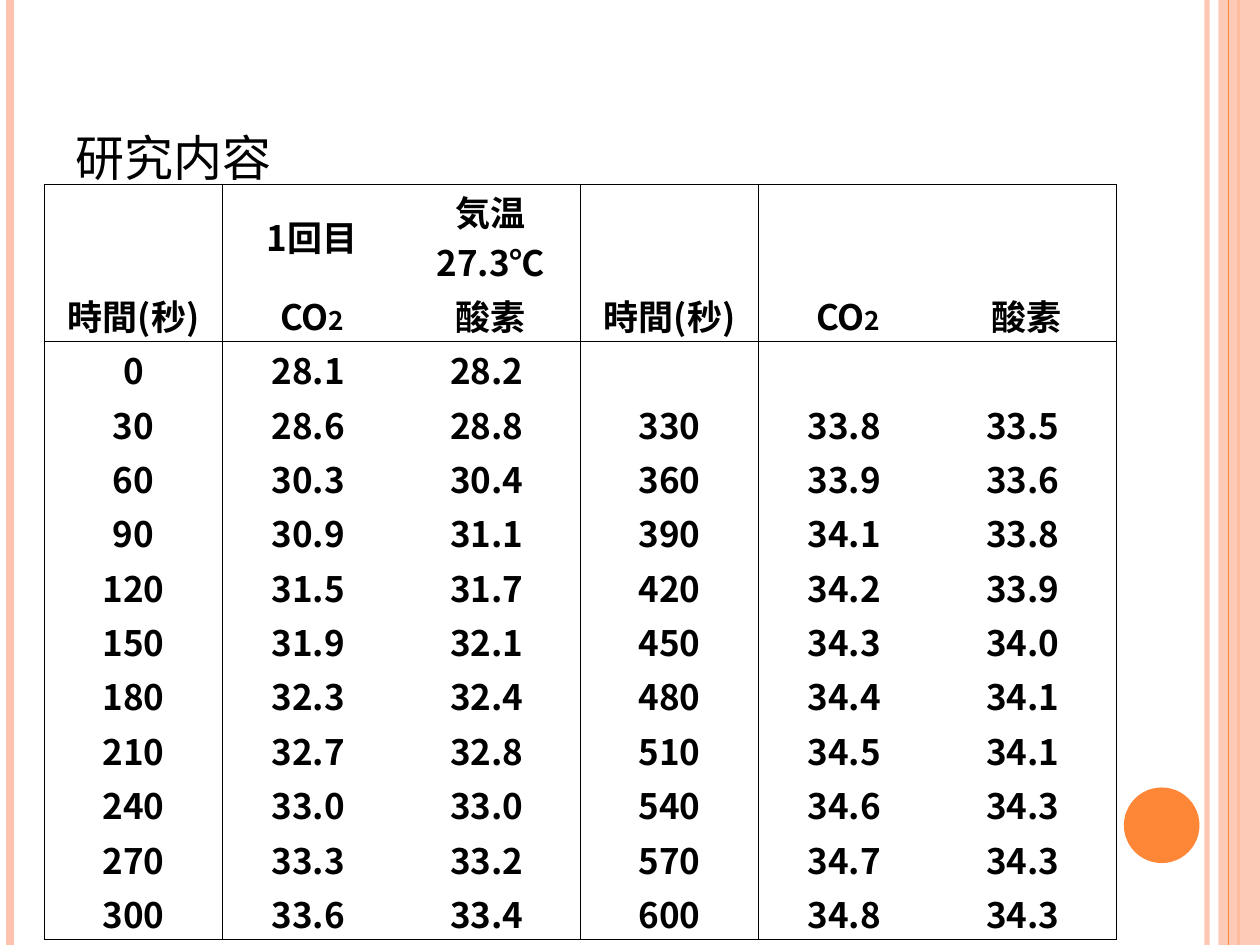
from dataclasses import dataclass

from lxml import etree
from pptx import Presentation
from pptx.dml.color import RGBColor
from pptx.enum.shapes import MSO_CONNECTOR, MSO_SHAPE
from pptx.enum.text import MSO_ANCHOR, PP_ALIGN
from pptx.oxml.ns import qn
from pptx.util import Inches, Pt

STRAIGHT = MSO_CONNECTOR.STRAIGHT
RECTANGLE, OVAL = MSO_SHAPE.RECTANGLE, MSO_SHAPE.OVAL
CENTER = PP_ALIGN.CENTER
MIDDLE, BOTTOM = MSO_ANCHOR.MIDDLE, MSO_ANCHOR.BOTTOM

SLIDE_WIDTH, SLIDE_HEIGHT = 10, 7.5
BLACK, ORANGE, PEACH = "000000", "FE8637", "FEC3AE"
SANS, SERIF = "Noto Sans CJK JP", "TeX Gyre Schola"

TABLE_LEFT, TABLE_TOP = 0.35, 1.46
TABLE_WIDTH, TABLE_HEIGHT = 8.51, 6
TITLE_ROW_HEIGHT = 0.82
COLUMN_COUNT = 6
RULED_COLUMNS = {0, 1, 3, 4, 6}
SUBSCRIPT_SIZE = 15
TIME_STEP = 30

TITLES = ["", "1回目", "気温27.3℃", "", "", ""]
HEADINGS = ["時間(秒)", "CO2", "酸素"] * 2
FIRST_HALF = [
    (28.1, 28.2), (28.6, 28.8), (30.3, 30.4), (30.9, 31.1), (31.5, 31.7), (31.9, 32.1),
    (32.3, 32.4), (32.7, 32.8), (33.0, 33.0), (33.3, 33.2), (33.6, 33.4),
]
SECOND_HALF = [
    (33.8, 33.5), (33.9, 33.6), (34.1, 33.8), (34.2, 33.9), (34.3, 34.0),
    (34.4, 34.1), (34.5, 34.1), (34.6, 34.3), (34.7, 34.3), (34.8, 34.3),
]


@dataclass
class Stripe:
    """A vertical line over the full height of the slide."""

    x: float
    color: str
    width: float
    opacity: int = 100


@dataclass
class Block:
    """A filled shape without outline."""

    kind: MSO_SHAPE
    left: float
    top: float
    width: float
    height: float
    color: str
    opacity: int = 100


STRIPES = [
    Stripe(9.58, PEACH, 3, 93),
    Stripe(0.08, PEACH, 4.5),
    Stripe(9.83, ORANGE, 1.5),
]
SIDE_BAND = Block(RECTANGLE, 9.67, 0, 0.33, SLIDE_HEIGHT, PEACH, 87)
BAND_STRIPE = Stripe(9.75, ORANGE, 0.75)
DISC = Block(OVAL, 8.92, 6.25, 0.6, 0.6, ORANGE)


def set_color(fill, color: str, opacity: int = 100) -> None:
    """Make a fill solid, with an optional opacity in percent."""
    fill.solid()
    fill.fore_color.rgb = RGBColor.from_string(color)
    if opacity < 100:
        element = fill._xPr.find(f".//{qn('a:srgbClr')}")
        etree.SubElement(element, qn("a:alpha"), val=str(opacity * 1000))


def draw_stripe(slide, stripe: Stripe) -> None:
    """Draw a vertical stripe without shadow."""
    x = Inches(stripe.x)
    connector = slide.shapes.add_connector(STRAIGHT, x, 0, x, Inches(SLIDE_HEIGHT))
    connector.line.width = Pt(stripe.width)
    set_color(connector.line.fill, stripe.color, stripe.opacity)
    etree.SubElement(connector._element.spPr, qn("a:effectLst"))


def draw_block(slide, block: Block) -> None:
    """Draw a filled shape without outline or shadow."""
    box = (Inches(n) for n in (block.left, block.top, block.width, block.height))
    shape = slide.shapes.add_shape(block.kind, *box)
    shape.shadow.inherit = False
    set_color(shape.fill, block.color, block.opacity)
    shape.line.fill.background()


def write_text(paragraph, text: str, *, size: float = 20, font: str = SANS,
               bold: bool = True, small_caps: bool = False) -> None:
    """Append a formatted run to a paragraph."""
    run = paragraph.add_run()
    run.text = text
    run.font.name = font
    run.font.size = Pt(size)
    run.font.bold = bold
    set_color(run.font.fill, BLACK)
    properties = run.font._element
    properties.find(qn("a:latin")).addnext(
        etree.Element(qn("a:ea"), typeface=SANS))
    if small_caps:
        properties.set("cap", "small")


def draw_title(slide, text: str) -> None:
    """Write the slide title above the table."""
    box = slide.shapes.add_textbox(Inches(0.5), Inches(0.3), Inches(8.17), Inches(1.25))
    frame = box.text_frame
    frame.word_wrap = True
    frame.vertical_anchor = BOTTOM
    write_text(frame.paragraphs[0], text, size=35, font=SERIF, bold=False, small_caps=True)


def set_borders(cell, ruled: dict[str, bool]) -> None:
    """Give each side of a cell a thin black line or none."""
    properties = cell._tc.get_or_add_tcPr()
    for side, visible in ruled.items():
        line = etree.SubElement(properties, qn(f"a:ln{side}"), w=str(Pt(0.5)))
        if visible:
            fill = etree.SubElement(line, qn("a:solidFill"))
            etree.SubElement(fill, qn("a:srgbClr"), val=BLACK)
        else:
            etree.SubElement(line, qn("a:noFill"))


def fill_cell(cell, text: str) -> None:
    """Write centred text in a cell, with the 2 of CO2 made small."""
    cell.fill.background()
    cell.vertical_anchor = MIDDLE
    cell.margin_left = cell.margin_right = cell.margin_top = Inches(0.01)
    cell.margin_bottom = 0
    paragraph = cell.text_frame.paragraphs[0]
    paragraph.alignment = CENTER
    if text == "CO2":
        write_text(paragraph, "CO")
        write_text(paragraph, "2", size=SUBSCRIPT_SIZE)
    else:
        write_text(paragraph, text)


def format_readings(readings: list[tuple[float, float]], start: int) -> list[list[str]]:
    """Turn readings into rows of time, CO2 and oxygen."""
    return [[str(start + TIME_STEP * index), *(f"{value:.1f} " for value in pair)]
            for index, pair in enumerate(readings)]


def draw_table(slide, rows: list[list[str]]) -> None:
    """Draw the table of readings with its rules."""
    row_count = len(rows)
    ruled_rows = {0, 2, row_count}
    row_height = (TABLE_HEIGHT - TITLE_ROW_HEIGHT) / (row_count - 1)
    table = slide.shapes.add_table(
        row_count, COLUMN_COUNT, Inches(TABLE_LEFT), Inches(TABLE_TOP),
        Inches(TABLE_WIDTH), Inches(TABLE_HEIGHT)).table
    table.first_row = table.horz_banding = False
    for column in table.columns:
        column.width = Inches(TABLE_WIDTH / COLUMN_COUNT)
    for row_index, row in enumerate(rows):
        table.rows[row_index].height = Inches(row_height if row_index else TITLE_ROW_HEIGHT)
        for column_index, text in enumerate(row):
            cell = table.cell(row_index, column_index)
            set_borders(cell, {
                "L": column_index in RULED_COLUMNS,
                "R": column_index + 1 in RULED_COLUMNS,
                "T": row_index in ruled_rows,
                "B": row_index + 1 in ruled_rows,
            })
            fill_cell(cell, text)


def main() -> None:
    """Build and save the slide."""
    presentation = Presentation()
    presentation.slide_width = Inches(SLIDE_WIDTH)
    presentation.slide_height = Inches(SLIDE_HEIGHT)
    slide = presentation.slides.add_slide(presentation.slide_layouts[6])
    for stripe in STRIPES:
        draw_stripe(slide, stripe)
    draw_block(slide, SIDE_BAND)
    draw_stripe(slide, BAND_STRIPE)
    draw_block(slide, DISC)
    draw_title(slide, "研究内容")
    left_rows = format_readings(FIRST_HALF, 0)
    right_rows = [[""] * 3, *format_readings(SECOND_HALF, 330)]
    readings = [left + right for left, right in zip(left_rows, right_rows)]
    draw_table(slide, [TITLES, HEADINGS, *readings])
    presentation.save("out.pptx")


if __name__ == "__main__":
    main()
